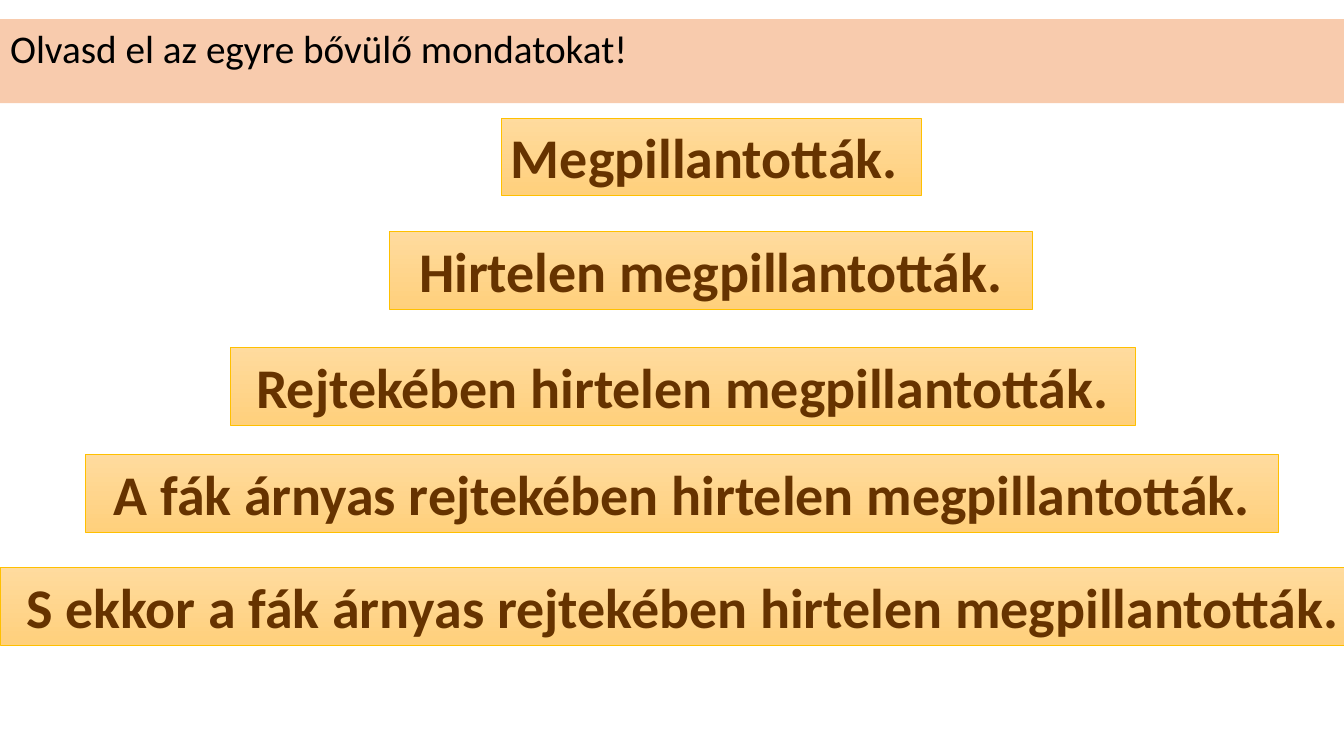
from pptx import Presentation
from pptx.dml.color import RGBColor as Rgb
from pptx.enum.shapes import MSO_SHAPE as Kind
from pptx.enum.text import MSO_ANCHOR as Anchor, MSO_AUTO_SIZE as Auto, PP_ALIGN as Align
from pptx.util import Pt

PX = 9144
WIDE, HIGH = 1333, 750
HUES = {"band": "F8CBAD", "ink": "000000", "brown": "663300",
        "gold": "FFC000", "top": "FFDB9E", "base": "FFD07C"}
ROWS = [
    (497, 117, 417, Align.LEFT, "Megpillantották."),
    (386, 230, 638, Align.CENTER, "Hirtelen megpillantották."),
    (228, 345, 898, Align.CENTER, "Rejtekében hirtelen megpillantották."),
    (85, 451, 1183, Align.CENTER, "A fák árnyas rejtekében hirtelen megpillantották."),
    (0, 563, 1354, Align.CENTER, "S ekkor a fák árnyas rejtekében hirtelen megpillantották."),
]


def hue(name):
    """Return the named colour."""
    return Rgb.from_string(HUES[name])


def style(item, values):
    """Set each attribute of an item from a dict."""
    for key, value in values.items():
        setattr(item, key, value)


def write(shape, text, align, ink, font):
    """Put one formatted line of text into a shape."""
    frame = shape.text_frame
    frame.text = text
    style(frame, {"word_wrap": True, "auto_size": Auto.SHAPE_TO_FIT_TEXT,
                  "vertical_anchor": Anchor.TOP})
    line = frame.paragraphs[0]
    line.alignment = align
    style(line.runs[0].font, {"name": "Calibri", **font})
    line.runs[0].font.color.rgb = hue(ink)


def add_title(slide, text):
    """Turn the title placeholder into the band across the top."""
    title = slide.shapes.title
    style(title, {"left": 0, "top": 19 * PX, "width": WIDE * PX, "height": 57 * PX})
    title.fill.solid()
    title.fill.fore_color.rgb = hue("band")
    write(title, text, Align.LEFT, "ink", {"size": Pt(28)})


def add_row(slide, left, top, width, align, text):
    """Add one golden sentence box."""
    box = slide.shapes.add_shape(Kind.RECTANGLE, left * PX, top * PX, width * PX, 77 * PX)
    box.shadow.inherit = False
    box.fill.gradient()
    box.fill.gradient_angle = 270
    for stop, name in zip(box.fill.gradient_stops, ("top", "base")):
        stop.color.rgb = hue(name)
    box.line.color.rgb = hue("gold")
    box.line.width = Pt(0.5)
    write(box, text, align, "brown", {"size": Pt(40), "bold": True})


def main():
    """Build the slide and save it."""
    deck = Presentation()
    style(deck, {"slide_width": WIDE * PX, "slide_height": HIGH * PX})
    slide = deck.slides.add_slide(deck.slide_layouts[5])
    add_title(slide, "Olvasd el az egyre bővülő mondatokat!")
    for row in ROWS:
        add_row(slide, *row)
    deck.save("out.pptx")


if __name__ == "__main__":
    main()
